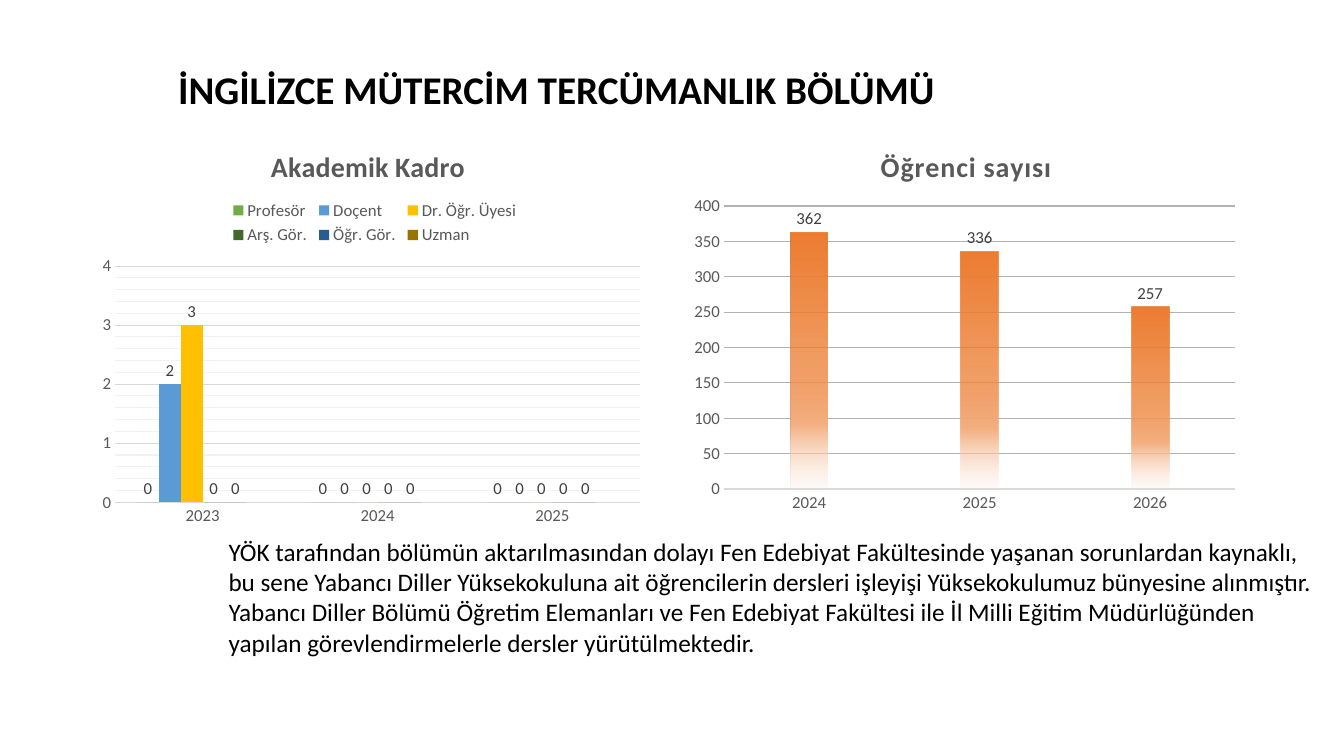
from dataclasses import dataclass

from lxml import etree
from pptx import Presentation
from pptx.chart.chart import Chart
from pptx.chart.data import CategoryChartData
from pptx.dml.color import RGBColor
from pptx.enum.chart import (XL_CHART_TYPE, XL_LABEL_POSITION,
                             XL_LEGEND_POSITION, XL_TICK_MARK)
from pptx.enum.text import MSO_ANCHOR
from pptx.oxml import parse_xml
from pptx.oxml.ns import nsdecls, qn
from pptx.util import Cm, Pt

COLUMNS = XL_CHART_TYPE.COLUMN_CLUSTERED
OUTSIDE_END = XL_LABEL_POSITION.OUTSIDE_END
LEGEND_TOP = XL_LEGEND_POSITION.TOP
NO_TICK = XL_TICK_MARK.NONE
MIDDLE = MSO_ANCHOR.MIDDLE

FONT = "Calibri"
COLORS = {
    "text": "000000", "axis_text": "595959", "label": "404040",
    "line": "D9D9D9", "minor": "F2F2F2", "strong_grid": "B3B3B3",
    "green": "70AD47", "blue": "5B9BD5", "gold": "FFC000",
    "dark_green": "43682B", "dark_blue": "255E91", "brown": "997300",
    "orange": "ED7D31", "light_orange": "F4B183", "pale_orange": "FBE5D6",
}
# Position in percent, colour, opacity in percent
ORANGE_FADE = [(0, "orange", 100), (51, "orange", 75),
               (75, "light_orange", 100), (100, "pale_orange", 15)]
Box = tuple[float, float, float, float]


@dataclass
class Series:
    name: str
    values: tuple
    color: str | None = None  # None gives the orange fade


@dataclass
class ColumnChart:
    title: str
    box: Box
    categories: list[str]
    series: list[Series]
    gap: int
    overlap: int
    maximum: int
    major_unit: int
    grid: str
    title_at: tuple[float, float]
    plot_at: Box
    minor_unit: float | None = None
    legend_at: Box | None = None
    title_spacing: int = 0


CHARTS = [
    ColumnChart(
        "Akademik Kadro", (2.34, 2.95, 14.07, 10.44), ["2023", "2024", "2025"],
        [Series("Profesör", (0, 0, 0), "green"),
         Series("Doçent", (2, 0, 0), "blue"),
         Series("Dr. Öğr. Üyesi", (3, 0, 0), "gold"),
         Series("Arş. Gör.", (0, 0, 0), "dark_green"),
         Series("Öğr. Gör.", (0, 0, 0), "dark_blue"),
         Series("Uzman", (None, None, None), "brown")],
        gap=199, overlap=0, maximum=4, major_unit=1, grid="line",
        title_at=(0.31, 0.06), plot_at=(0.04, 0.36, 0.94, 0.57),
        minor_unit=0.2, legend_at=(0.24, 0.19, 0.53, 0.13)),
    ColumnChart(
        "Öğrenci sayısı", (17.25, 2.95, 14.17, 10.19), ["2024", "2025", "2026"],
        [Series("Series 1", (362, 336, 257))],
        gap=355, overlap=-70, maximum=400, major_unit=50, grid="strong_grid",
        title_at=(0.34, 0.06), plot_at=(0.07, 0.22, 0.91, 0.7),
        title_spacing=50),
]
HEADING = "İNGİLİZCE MÜTERCİM TERCÜMANLIK BÖLÜMÜ"
NOTE = [
    "YÖK tarafından bölümün aktarılmasından dolayı Fen Edebiyat Fakültesinde yaşanan sorunlardan kaynaklı,",
    "bu sene Yabancı Diller Yüksekokuluna ait öğrencilerin dersleri işleyişi Yüksekokulumuz bünyesine alınmıştır.",
    "Yabancı Diller Bölümü Öğretim Elemanları ve Fen Edebiyat Fakültesi ile İl Milli Eğitim Müdürlüğünden",
    "yapılan görevlendirmelerle dersler yürütülmektedir.",
]


def rgb(name: str) -> RGBColor:
    return RGBColor.from_string(COLORS[name])


def set_font(font, size: float, color: str, bold: bool = False) -> None:
    font.name, font.size, font.bold = FONT, Pt(size), bold
    font.color.rgb = rgb(color)


def set_line(line, color: str) -> None:
    line.color.rgb = rgb(color)
    line.width = Pt(0.75)


def place(element, index: int, at: tuple, inner: bool = False) -> None:
    """Fix a chart part at fractions of the chart area."""
    for old in element.findall(qn("c:layout")):
        element.remove(old)
    layout = etree.Element(qn("c:layout"))
    manual = etree.SubElement(layout, qn("c:manualLayout"))
    pairs = [("xMode", "edge"), ("yMode", "edge"), *zip("xywh", at)]
    if inner:
        pairs.insert(0, ("layoutTarget", "inner"))
    for tag, value in pairs:
        etree.SubElement(manual, qn(f"c:{tag}")).set("val", str(value))
    element.insert(index, layout)


def fade_fill(series) -> None:
    """Fill the columns with the downward orange gradient."""
    stops = "".join(
        f'<a:gs pos="{pos * 1000}"><a:srgbClr val="{COLORS[color]}">'
        f'<a:alpha val="{alpha * 1000}"/></a:srgbClr></a:gs>'
        for pos, color, alpha in ORANGE_FADE)
    series.format.fill.background()
    sp_pr = series._element.find(qn("c:spPr"))
    sp_pr.replace(sp_pr.find(qn("a:noFill")), parse_xml(
        f'<a:gradFill {nsdecls("a")}><a:gsLst>{stops}</a:gsLst>'
        '<a:lin ang="5400000" scaled="0"/></a:gradFill>'))


def add_minor_gridlines(axis, color: str) -> None:
    axis.has_minor_gridlines = True
    axis._element.find(qn("c:minorGridlines")).append(parse_xml(
        f'<c:spPr {nsdecls("c", "a")}><a:ln w="{Pt(0.75)}"><a:solidFill>'
        f'<a:srgbClr val="{COLORS[color]}"/></a:solidFill></a:ln></c:spPr>'))


def style_axes(chart: Chart, info: ColumnChart) -> None:
    cat, val = chart.category_axis, chart.value_axis
    for axis in (cat, val):
        axis.major_tick_mark = axis.minor_tick_mark = NO_TICK
        set_font(axis.tick_labels.font, 12, "axis_text")
    set_line(cat.format.line, "line")
    val.format.line.fill.background()
    val.minimum_scale, val.maximum_scale = 0, info.maximum
    val.major_unit = info.major_unit
    set_line(val.major_gridlines.format.line, info.grid)
    if info.minor_unit:
        val.minor_unit = info.minor_unit
        add_minor_gridlines(val, "minor")


def style_series(chart: Chart, info: ColumnChart) -> None:
    plot = chart.plots[0]
    plot.gap_width, plot.overlap = info.gap, info.overlap
    plot.vary_by_categories = False
    for drawn, series in zip(plot.series, info.series):
        if series.color:
            drawn.format.fill.solid()
            drawn.format.fill.fore_color.rgb = rgb(series.color)
        else:
            fade_fill(drawn)
        labels = drawn.data_labels
        labels.show_value = True
        labels.position = OUTSIDE_END
        set_font(labels.font, 12, "label")


def add_column_chart(slide, info: ColumnChart) -> None:
    data = CategoryChartData()
    data.categories = info.categories
    for series in info.series:
        data.add_series(series.name, series.values)
    chart = slide.shapes.add_chart(COLUMNS, *map(Cm, info.box), data).chart
    set_font(chart.font, 10, "text")

    chart.has_title = True
    r = chart.chart_title.text_frame.paragraphs[0].add_run()
    r.text = info.title
    set_font(r.font, 20, "axis_text", bold=True)
    if info.title_spacing:
        r._r.get_or_add_rPr().set("spc", str(info.title_spacing))
    place(chart.chart_title._element, 1, info.title_at)

    chart.has_legend = info.legend_at is not None
    if info.legend_at:
        chart.legend.position = LEGEND_TOP
        chart.legend.include_in_layout = False
        set_font(chart.legend.font, 12, "axis_text")
        place(chart.legend._element, 1, info.legend_at)

    style_axes(chart, info)
    style_series(chart, info)
    plot_area = chart._chartSpace.find(f".//{qn('c:plotArea')}")
    place(plot_area, 0, info.plot_at, inner=True)


def add_text(slide, box: Box, lines: list[str], size: float, bold: bool = False):
    tf = slide.shapes.add_textbox(*map(Cm, box)).text_frame
    tf.word_wrap = True
    for i, line in enumerate(lines):
        p = tf.add_paragraph() if i else tf.paragraphs[0]
        r = p.add_run()
        r.text = line
        set_font(r.font, size, "text", bold)
    return tf


def main() -> None:
    prs = Presentation()
    prs.slide_width, prs.slide_height = Cm(33.87), Cm(19.05)
    slide = prs.slides.add_slide(prs.slide_layouts[6])
    tf = add_text(slide, (4.24, 1.02, 20.52, 2.59), [HEADING], 28, bold=True)
    tf.vertical_anchor = MIDDLE
    tf.paragraphs[0].line_spacing = 0.9
    for info in CHARTS:
        add_column_chart(slide, info)
    add_text(slide, (5.51, 13.39, 29.54, 3.33), NOTE, 18)
    prs.save("out.pptx")


if __name__ == "__main__":
    main()
